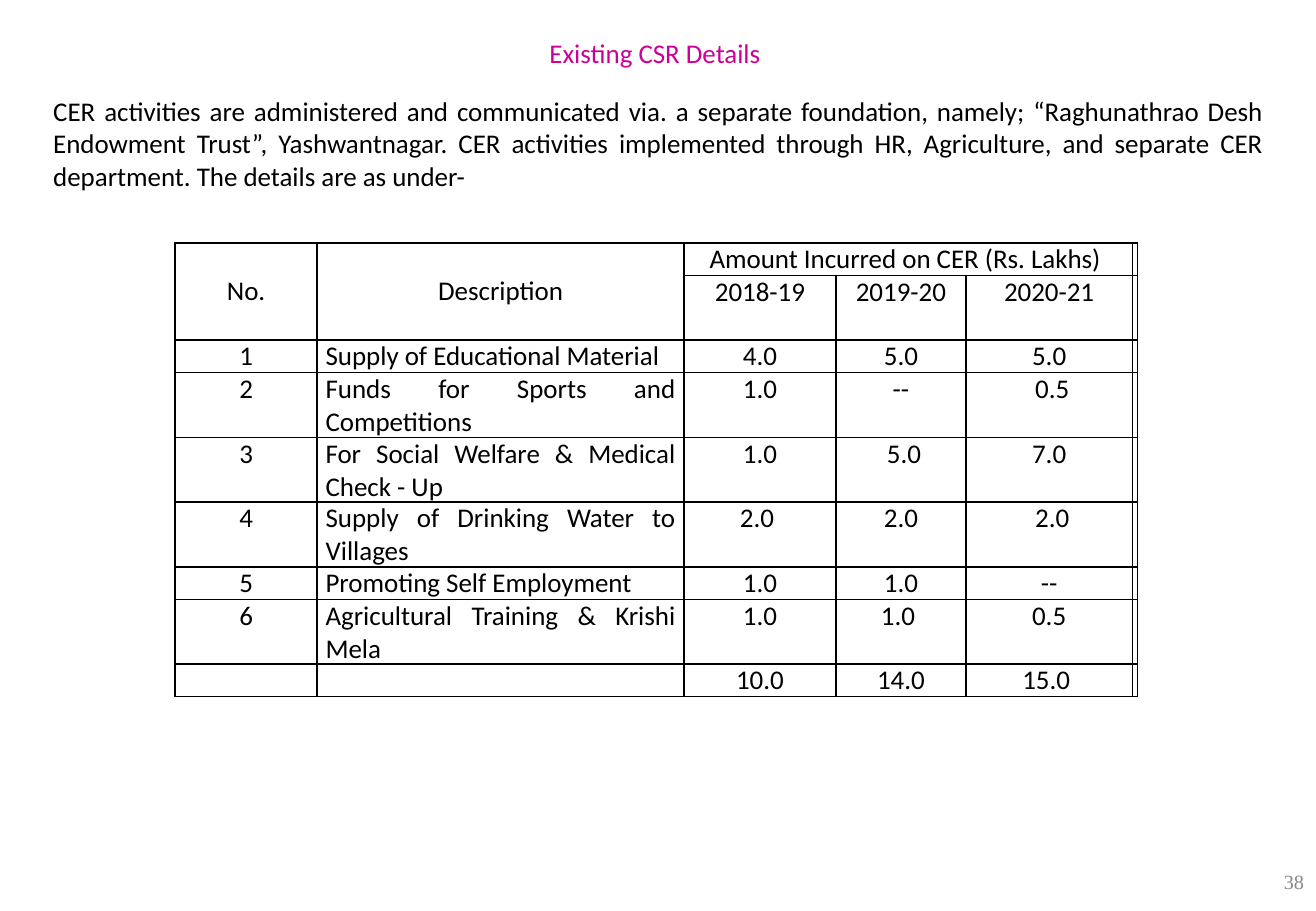
from dataclasses import dataclass

from lxml import etree
from pptx import Presentation
from pptx.dml.color import RGBColor
from pptx.enum.text import MSO_ANCHOR, PP_ALIGN
from pptx.oxml.ns import qn
from pptx.util import Inches, Pt

CENTER, JUSTIFY, RIGHT = PP_ALIGN.CENTER, PP_ALIGN.JUSTIFY, PP_ALIGN.RIGHT
TOP, MIDDLE = MSO_ANCHOR.TOP, MSO_ANCHOR.MIDDLE
PAGE_WIDTH, PAGE_HEIGHT = 10.83, 7.5


@dataclass(frozen=True)
class Theme:
    """Colours, fonts and type sizes of the slide."""
    ink: str = "000000"
    heading: str = "CC0099"
    muted: str = "898989"
    body_font: str = "Calibri"
    number_font: str = "Times New Roman"
    body_size: int = 16
    number_size: int = 12
    border_width: int = 1


THEME = Theme()
HEADING = "Existing CSR Details"
INTRO = (
    "CER activities are administered and communicated via. a separate foundation, "
    "namely; “Raghunathrao Desh Endowment Trust”, Yashwantnagar. CER activities "
    "implemented through HR, Agriculture, and separate CER department. "
    "The details are as under-"
)
ROWS = [
    ("No.", "Description", "Amount Incurred on CER (Rs. Lakhs) ", "", "", ""),
    ("", "", "2018-19", "2019-20", "2020-21", ""),
    ("1", "Supply of Educational Material", " 4.0 ", " 5.0 ", "5.0", ""),
    ("2", "Funds for Sports and Competitions", "1.0", "--", " 0.5", ""),
    ("3", "For Social Welfare & Medical Check - Up", " 1.0 ", " 5.0", "7.0", ""),
    ("4", "Supply of Drinking Water to Villages", "2.0 ", "2.0", " 2.0", ""),
    ("5", "Promoting Self Employment", " 1.0 ", "1.0", "--", ""),
    ("6", "Agricultural Training & Krishi Mela", " 1.0 ", "1.0 ", " 0.5 ", ""),
    ("", "", " 10.0 ", "14.0", "15.0 ", ""),
]
COLUMN_WIDTHS = (1.17, 3.02, 1.25, 1.07, 1.37, 0.04)
ROW_LINES = (1, 2, 1, 2, 2, 2, 1, 2, 1)
HEADER_ROWS = 2
MERGES = (((0, 0), (1, 0)), ((0, 1), (1, 1)), ((0, 2), (0, 4)))


def style_paragraph(para, align, color, font=THEME.body_font, size=THEME.body_size):
    """Set the alignment and font of one paragraph."""
    para.alignment = align
    para.font.name = font
    para.font.size = Pt(size)
    para.font.color.rgb = RGBColor.from_string(color)


def add_text(page, box, text, align, color, anchor=TOP, **type_style):
    """Place a wrapped one-paragraph text in a box given in inches."""
    frame = page.shapes.add_textbox(*map(Inches, box)).text_frame
    frame.word_wrap = True
    frame.vertical_anchor = anchor
    para = frame.paragraphs[0]
    para.text = text
    style_paragraph(para, align, color, **type_style)


def add_borders(cell):
    """Draw a thin line on all four sides of a cell."""
    properties = cell._tc.get_or_add_tcPr()
    for index, side in enumerate(("lnL", "lnR", "lnT", "lnB")):
        line = etree.Element(qn(f"a:{side}"), w=str(Pt(THEME.border_width)))
        fill = etree.SubElement(line, qn("a:solidFill"))
        etree.SubElement(fill, qn("a:srgbClr"), val=THEME.ink)
        properties.insert(index, line)


def fill_cell(cell, text, align, anchor):
    """Write and format one table cell."""
    side_margin = Inches(0.07 if text else 0)
    cell.margin_left = cell.margin_right = side_margin
    cell.margin_top = cell.margin_bottom = 0
    cell.vertical_anchor = anchor
    cell.fill.background()
    add_borders(cell)
    para = cell.text_frame.paragraphs[0]
    para.text = text
    style_paragraph(para, align, THEME.ink)
    if not text:
        para._p.get_or_add_endParaRPr().set("sz", str(THEME.body_size * 100))


def add_expense_table(page, box):
    """Build the table of yearly amounts inside a box given in inches."""
    left, top, width, height = box
    frame = page.shapes.add_table(
        len(ROWS), len(COLUMN_WIDTHS), *map(Inches, (left, top, width, height)))
    table = frame.table
    table.first_row = table.horz_banding = False
    for column, share in zip(table.columns, COLUMN_WIDTHS):
        column.width = Inches(width * share / sum(COLUMN_WIDTHS))
    for row, lines in zip(table.rows, ROW_LINES):
        row.height = Inches(height * lines / sum(ROW_LINES))
    for row_index, texts in enumerate(ROWS):
        anchor = MIDDLE if row_index == 0 else TOP
        for column_index, text in enumerate(texts):
            described = column_index == 1 and row_index >= HEADER_ROWS
            align = JUSTIFY if described else CENTER
            fill_cell(table.cell(row_index, column_index), text, align, anchor)
    for first, last in MERGES:
        table.cell(*first).merge(table.cell(*last))


def build_details_slide(deck):
    """Add the slide with heading, introduction, table and page number."""
    page = deck.slides.add_slide(deck.slide_layouts[6])
    add_text(page, (PAGE_WIDTH - 0.39, 7.06, 0.39, 0.4), "38", RIGHT, THEME.muted,
             MIDDLE, font=THEME.number_font, size=THEME.number_size)
    add_text(page, (3.65, 0.25, 3.48, 0.37), HEADING, CENTER, THEME.heading)
    add_text(page, (0.34, 0.73, 10.16, 0.91), INTRO, JUSTIFY, THEME.ink)
    add_expense_table(page, (1.44, 2, 7.92, 3.73))


def main():
    """Create the deck and save it."""
    deck = Presentation()
    deck.slide_width, deck.slide_height = Inches(PAGE_WIDTH), Inches(PAGE_HEIGHT)
    build_details_slide(deck)
    deck.save("out.pptx")


if __name__ == "__main__":
    main()
